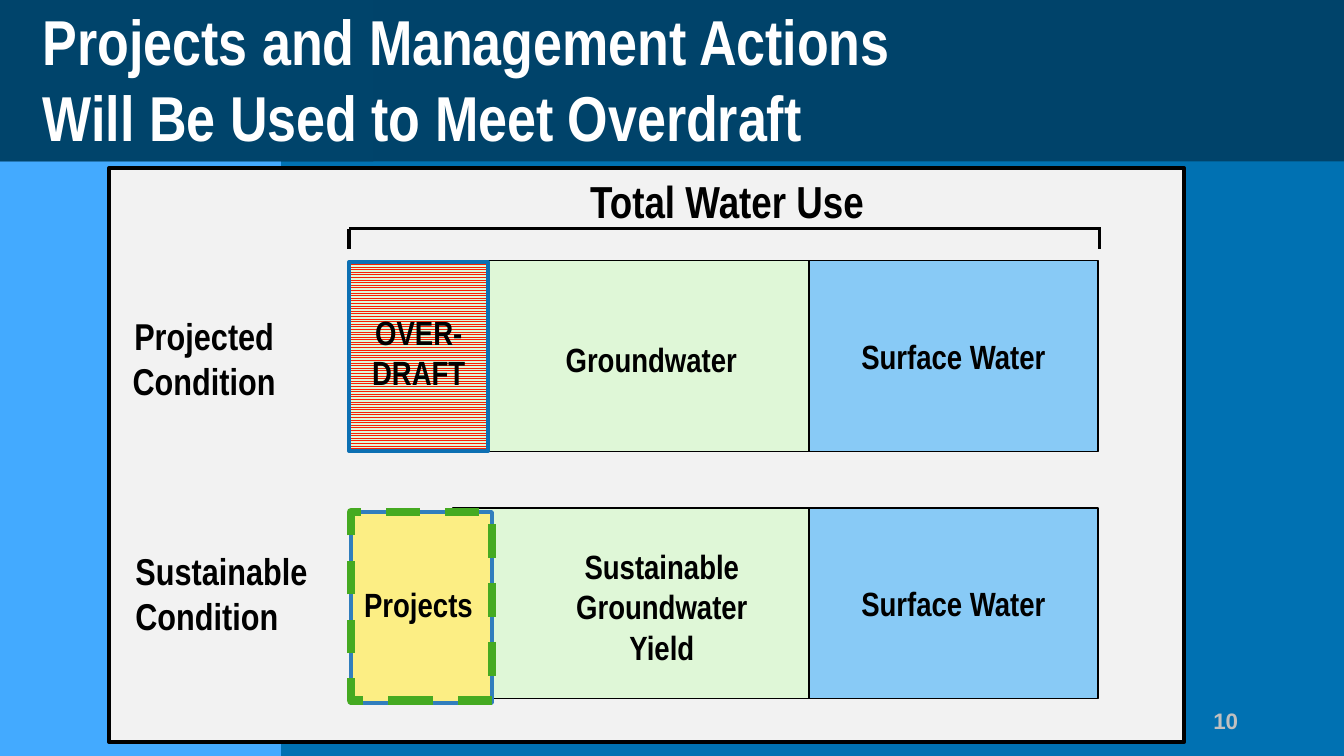
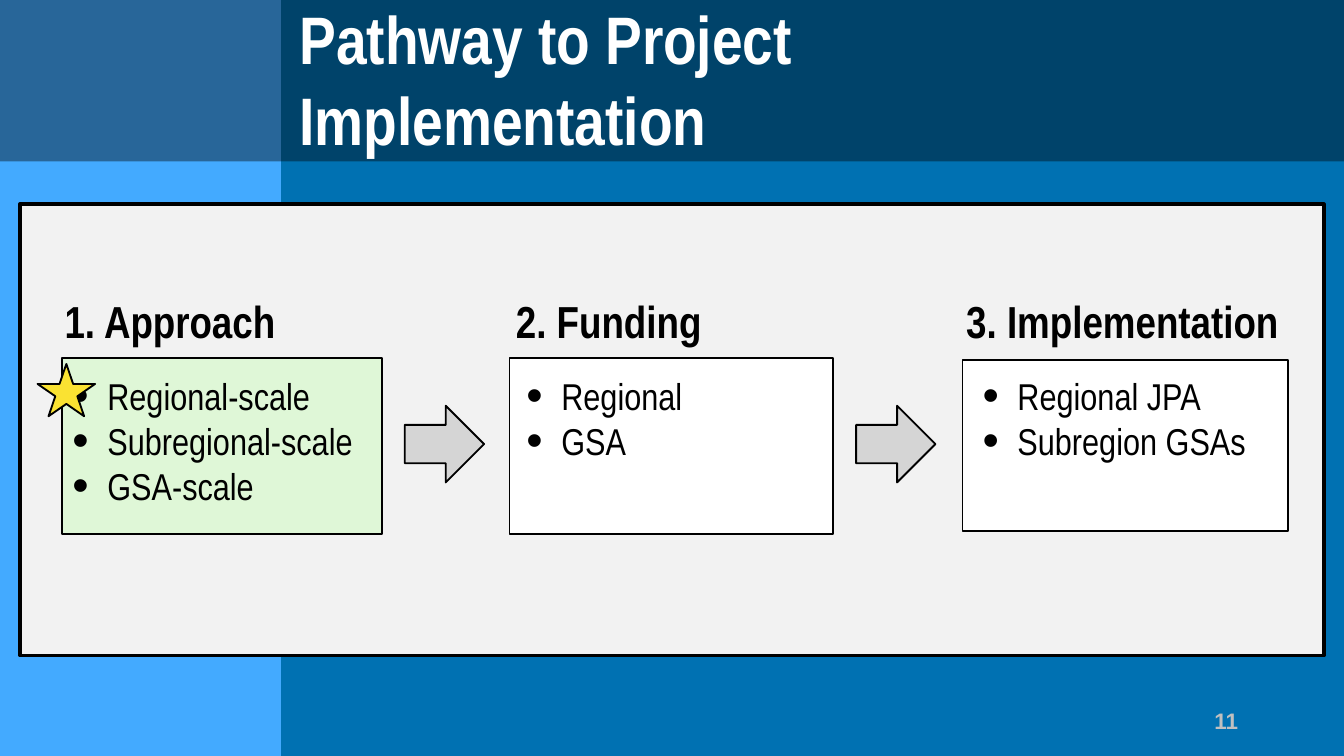
from typing import NamedTuple, Optional

from lxml import etree
from pptx import Presentation
from pptx.dml.color import RGBColor
from pptx.enum.dml import MSO_LINE, MSO_PATTERN
from pptx.enum.shapes import MSO_CONNECTOR, MSO_SHAPE
from pptx.enum.text import MSO_ANCHOR, PP_ALIGN
from pptx.oxml.ns import qn
from pptx.shapes.autoshape import Shape
from pptx.shapes.shapetree import GroupShapes, SlideShapes
from pptx.slide import Slide
from pptx.text.text import TextFrame
from pptx.util import Cm, Pt

RECT, ARROW, STAR = MSO_SHAPE.RECTANGLE, MSO_SHAPE.RIGHT_ARROW, MSO_SHAPE.STAR_5_POINT
LEFT, MID, RIGHT = PP_ALIGN.LEFT, PP_ALIGN.CENTER, PP_ALIGN.RIGHT
TOP, CENTER = MSO_ANCHOR.TOP, MSO_ANCHOR.MIDDLE
HATCH, DASH = MSO_PATTERN.LIGHT_HORIZONTAL, MSO_LINE.DASH
LINE = MSO_CONNECTOR.STRAIGHT

INK = {
    "back": "0071B2", "side": "43AAFF", "black": "000000", "white": "FFFFFF",
    "navy": "00446B", "panel": "F2F2F2", "page": "C0C0C0", "ground": "DFF7D7",
    "surface": "88CAF6", "red": "FA1F00", "edge": "0D70B3", "yellow": "FCEE84",
    "rim": "317EBD", "green": "45AA21", "arrow": "D5D5D5", "star": "FAE232",
}
BODY = "Arial Narrow"
WIDE, HIGH, BAND = 25.4, 14.29, 3.05
STEP = 0.66
SLIM = (0.1, 0.05)
ROOMY = (0.25, 0.13)


class Box(NamedTuple):
    x: float
    y: float
    w: float
    h: float


class Style(NamedTuple):
    size: float
    bold: bool = True
    ink: str = "black"
    font: str = BODY
    align: PP_ALIGN = LEFT


class Label(NamedTuple):
    box: Box
    text: str
    style: Style


class Row(NamedTuple):
    """One water bar: its top, and where its groundwater part starts."""
    top: float
    start: float


class Stage(NamedTuple):
    head: str
    head_box: Box
    card: Box
    fill: str
    items: list[str]
    list_box: Box


PAGE = Style(12, ink="page", font="Arial", align=RIGHT)
PART = Style(18, align=MID)
SIDE = Style(20)
HEAD = Style(24)
ITEM = Style(20, bold=False)


def tint(name: str) -> RGBColor:
    return RGBColor.from_string(INK[name])


def place(box: Box) -> list[Cm]:
    return [Cm(part) for part in box]


def shape(shapes: SlideShapes | GroupShapes, box: Box, fill: Optional[str],
          line: Optional[str] = None, width: float = 1,
          kind: MSO_SHAPE = RECT) -> Shape:
    item = shapes.add_shape(kind, *place(box))
    item.shadow.inherit = False
    if fill:
        item.fill.solid()
        item.fill.fore_color.rgb = tint(fill)
    else:
        item.fill.background()
    if line:
        item.line.color.rgb = tint(line)
        item.line.width = Pt(width)
    else:
        item.line.fill.background()
    return item


def write(frame: TextFrame, lines: list[str], style: Style, step: float = 0,
          dots: bool = False) -> None:
    """Fill a frame, one paragraph a line, indented by step and bulleted if asked."""
    frame.word_wrap = True
    for at, line in enumerate(lines):
        para = frame.add_paragraph() if at else frame.paragraphs[0]
        para.alignment = style.align
        if step:
            props = para._p.get_or_add_pPr()
            props.set("marL", str(Cm(2 * step if dots else step)))
            props.set("indent", str(Cm(-step if dots else 0)))
            if dots:
                etree.SubElement(props, qn("a:buSzPct")).set("val", "125000")
                etree.SubElement(props, qn("a:buFont")).set("typeface", "Arial")
                etree.SubElement(props, qn("a:buChar")).set("char", "•")
        run = para.add_run()
        run.text = line
        font = run.font
        font.name, font.size, font.bold = style.font, Pt(style.size), style.bold
        font.color.rgb = tint(style.ink)


def text(slide: Slide, box: Box, lines: list[str], style: Style,
         pad: tuple[float, float] = ROOMY, anchor: MSO_ANCHOR = TOP,
         step: float = 0, dots: bool = False) -> None:
    frame = slide.shapes.add_textbox(*place(box)).text_frame
    frame.margin_left = frame.margin_right = Cm(pad[0])
    frame.margin_top = frame.margin_bottom = Cm(pad[1])
    frame.vertical_anchor = anchor
    write(frame, lines, style, step, dots)


def rule(slide: Slide, x: float, y: float, end_x: float, end_y: float) -> None:
    item = slide.shapes.add_connector(LINE, Cm(x), Cm(y), Cm(end_x), Cm(end_y))
    item.line.color.rgb = tint("black")
    item.line.width = Pt(2)
    etree.SubElement(item._element.spPr, qn("a:effectLst"))


def base(deck: Presentation, panel: Box, page: int) -> Slide:
    """Add a slide with the shared bands, panel and page number."""
    slide = deck.slides.add_slide(deck.slide_layouts[6])
    back = slide.background.fill
    back.solid()
    back.fore_color.rgb = tint("back")
    shape(slide.shapes, Box(0, 0, 5.31, HIGH), "side")
    band = shape(slide.shapes, Box(0, 0, WIDE, BAND), "black")
    color = band._element.spPr.find(qn("a:solidFill"))[0]
    etree.SubElement(color, qn("a:alpha")).set("val", "40000")
    shape(slide.shapes, panel, "panel", "black", 2)
    text(slide, Box(17.93, 13.23, 5.72, 0.76), [str(page)], PAGE)
    return slide


def title(slide: Slide, x: float, width: float, words: str, size: float) -> None:
    text(slide, Box(x, 0.28, width, 2.39), [words],
         Style(size, ink="white"), SLIM, CENTER)


def water(slide: Slide, row: Row) -> None:
    split, end, tall = 15.29, 20.75, 3.61
    group = slide.shapes.add_group_shape().shapes
    shape(group, Box(row.start, row.top, split - row.start, tall),
          "ground", "black", 0.75)
    right = shape(group, Box(split, row.top, end - split, tall),
                  "surface", "black", 0.75)
    right.text_frame.vertical_anchor = CENTER
    write(right.text_frame, ["Surface Water"], PART)


LABELS = [
    Label(Box(6.45, 10.9, 2.92, 1.02), "Projects", PART),
    Label(Box(9.86, 6.27, 4.9, 1.02), "Groundwater", PART),
    Label(Box(1.75, 5.79, 4.22, 1.96), "Projected Condition", SIDE._replace(align=MID)),
    Label(Box(2.31, 10.24, 4.22, 1.96), "Sustainable Condition", SIDE),
    Label(Box(5.94, 3.15, 15.6, 1.27), "Total Water Use", HEAD._replace(align=MID)),
    Label(Box(10.06, 10.19, 4.9, 2.57), "Sustainable Groundwater Yield", PART),
    Label(Box(6.76, 5.77, 2.31, 1.8), "OVER-DRAFT", PART),
]

HEAD_TOP, LIST_TOP, DEEP = 5.51, 7.01, 3.94
STAGES = [
    Stage("1. Approach", Box(0.46, HEAD_TOP, 11.18, DEEP),
          Box(1.17, 6.76, 6.05, 3.33), "ground",
          ["Regional-scale", "Subregional-scale", "GSA-scale"],
          Box(0.61, LIST_TOP, 8.92, DEEP)),
    Stage("2. Funding", Box(8.99, HEAD_TOP, 7.75, DEEP),
          Box(9.63, 6.76, 6.12, 3.33), "white",
          ["Regional", "GSA"], Box(9.19, LIST_TOP, 6.48, DEEP)),
    Stage("3. Implementation", Box(17.5, HEAD_TOP, 6.99, DEEP),
          Box(18.19, 6.81, 6.15, 3.23), "white",
          ["Regional JPA", "Subregion GSAs"], Box(17.81, LIST_TOP, 6.32, DEEP)),
]


def use(deck: Presentation) -> None:
    """Build the slide that compares water use in both conditions."""
    slide = base(deck, Box(2.06, 3.18, 20.32, 10.85), 10)
    shapes = slide.shapes
    shape(shapes, Box(0, 0, 7.06, BAND), "navy")
    title(slide, 0.71, 16.89,
          "Projects and Management Actions Will Be Used to Meet Overdraft", 34)
    for row in (Row(4.93, 6.63), Row(9.6, 8.56)):
        water(slide, row)
    draft = shape(shapes, Box(6.6, 4.95, 2.62, 3.58), "ground", "edge", 2)
    draft.fill.patterned()
    draft.fill.pattern = HATCH
    draft.fill.fore_color.rgb = tint("red")
    draft.fill.back_color.rgb = tint("ground")
    shape(shapes, Box(6.63, 9.68, 2.67, 3.61), "yellow", "rim", 2)
    frame = shape(shapes, Box(6.63, 9.68, 2.67, 3.56), None, "green", 4.5)
    frame.line.dash_style = DASH
    for label in LABELS:
        text(slide, label.box, [label.text], label.style)
    rule(slide, 6.6, 4.32, 20.8, 4.32)
    for x in (6.6, 20.78):
        rule(slide, x, 4.32, x, 4.71)


def steps(deck: Presentation) -> None:
    """Build the slide with the three stages."""
    slide = base(deck, Box(0.38, 3.86, 24.64, 8.53), 11)
    shapes = slide.shapes
    title(slide, 5.56, 14.76, "Pathway to Project Implementation", 36)
    for stage in STAGES:
        shape(shapes, stage.card, stage.fill, "black")
    for stage in STAGES:
        text(slide, stage.head_box, [stage.head], HEAD, SLIM, step=STEP)
        text(slide, stage.list_box, stage.items, ITEM, SLIM, step=STEP, dots=True)
    for x in (7.65, 16.18):
        shape(shapes, Box(x, 7.67, 1.5, 1.45), "arrow", "black", kind=ARROW)
    shape(shapes, Box(0.71, 6.88, 1.09, 0.99), "star", "black", kind=STAR)


def main() -> None:
    deck = Presentation()
    deck.slide_width, deck.slide_height = Cm(WIDE), Cm(HIGH)
    use(deck)
    steps(deck)
    deck.save("out.pptx")


if __name__ == "__main__":
    main()
